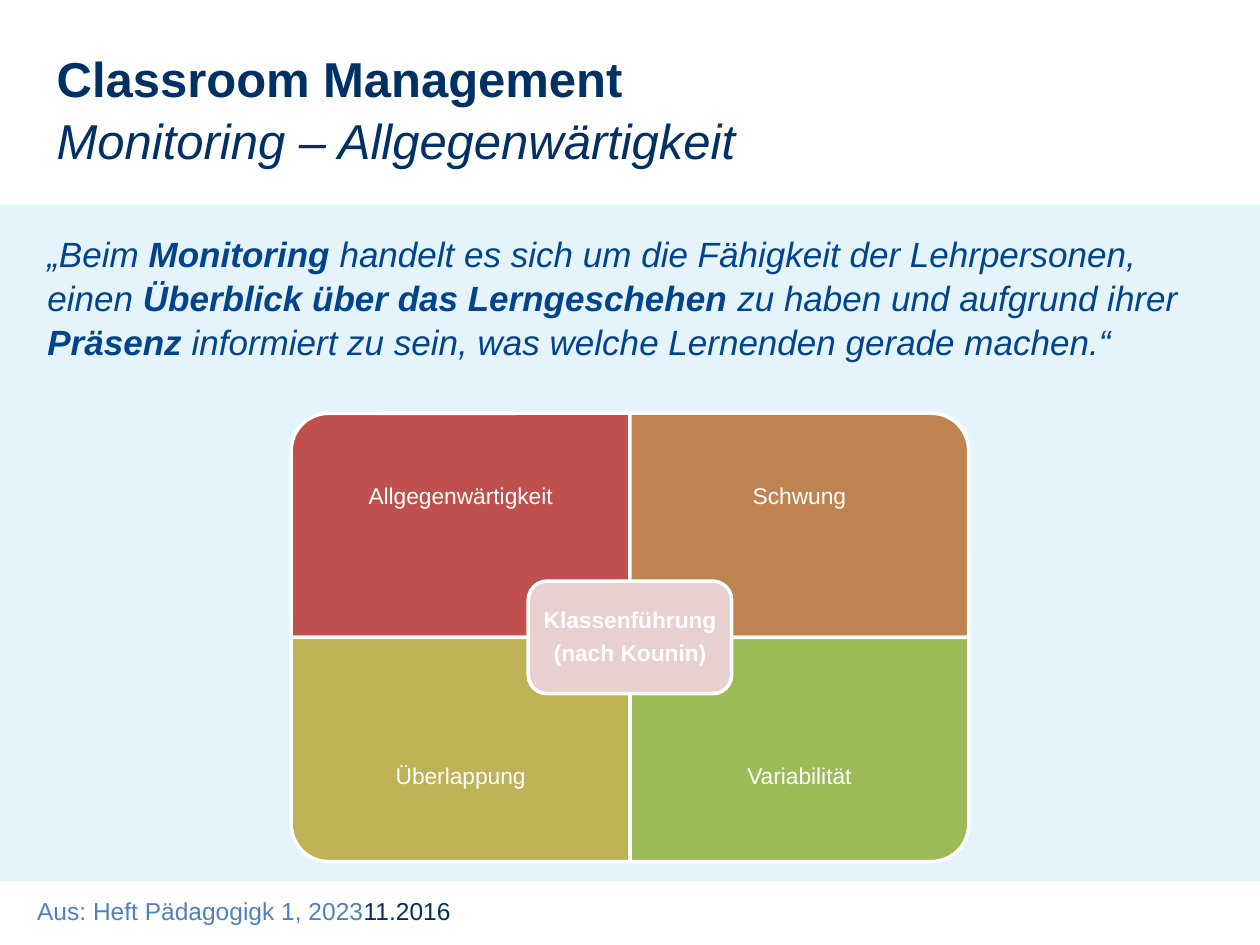
from dataclasses import dataclass

from lxml import etree
from pptx import Presentation
from pptx.dml.color import RGBColor
from pptx.enum.shapes import MSO_SHAPE
from pptx.enum.text import MSO_ANCHOR, MSO_AUTO_SIZE, PP_ALIGN
from pptx.oxml.ns import qn
from pptx.util import Cm, Pt

RECT, ROUND, CORNER = (MSO_SHAPE.RECTANGLE, MSO_SHAPE.ROUNDED_RECTANGLE,
                       MSO_SHAPE.ROUND_1_RECTANGLE)
TOP, MIDDLE = MSO_ANCHOR.TOP, MSO_ANCHOR.MIDDLE
LEFT, CENTER = PP_ALIGN.LEFT, PP_ALIGN.CENTER
NO_FIT = MSO_AUTO_SIZE.NONE

COLORS = {
    "panel": "008CCF", "navy": "003064", "blue": "00448D", "source": "4F81BD",
    "white": "FFFFFF", "red": "C0504D", "brown": "BE8351", "olive": "BDB255",
    "green": "9BBB59", "rose": "E8D0D0",
}

MID_X, MID_Y = 12.7, 12.85
TILE_W, TILE_H = 6.83, 4.52
LABEL_H = TILE_H * 0.75
HUB_W, HUB_H = 4.1, 2.27


@dataclass
class Run:
    text: str
    color: str
    size: float
    bold: bool = False
    italic: bool = False


@dataclass
class Tile:
    label: str
    color: str
    col: int
    row: int
    turn: int


TILES = [
    Tile("Allgegenwärtigkeit", "red", 0, 0, 270),
    Tile("Schwung", "brown", 1, 0, 0),
    Tile("Überlappung", "olive", 0, 1, 180),
    Tile("Variabilität", "green", 1, 1, 90),
]

TITLE = [
    [Run("Classroom Management", "navy", 28, bold=True)],
    [Run("Monitoring – Allgegenwärtigkeit", "navy", 28, italic=True)],
]
QUOTE_PARTS = [
    ("„Beim ", False), ("Monitoring ", True),
    ("handelt es sich um die Fähigkeit der Lehrpersonen, einen ", False),
    ("Überblick über das Lerngeschehen ", True),
    ("zu haben und aufgrund ihrer ", False), ("Präsenz", True),
    (" informiert zu sein, was welche Lernenden gerade machen.“", False),
]
QUOTE = [[Run(text, "blue", 20, bold, True) for text, bold in QUOTE_PARTS]]
FOOTER = [[Run("Aus: Heft Pädagogigk 1, 2023", "source", 14),
           Run("11.2016", "navy", 14)]]
HUB = [[Run(text, "white", 13, bold=True)]
       for text in ("Klassenführung", "(nach Kounin)")]

HEAD_FORM = {"alignment": LEFT, "line_spacing": 1.05,
             "space_before": Pt(0), "space_after": Pt(0)}
LABEL_FORM = {"alignment": CENTER, "line_spacing": 0.9,
              "space_before": Pt(0), "space_after": Pt(4.55)}
FOOT_FORM = {"alignment": LEFT}


def assign(target, values: dict) -> None:
    for name, value in values.items():
        setattr(target, name, value)


def rgb(name: str) -> RGBColor:
    return RGBColor.from_string(COLORS[name])


def place(shape, left: float, top: float, width: float, height: float) -> None:
    assign(shape, {"left": Cm(left), "top": Cm(top),
                   "width": Cm(width), "height": Cm(height)})


def write(shape, lines: list[list[Run]], form: dict, anchor=TOP,
          inset: float | None = None) -> None:
    frame = shape.text_frame
    assign(frame, {"word_wrap": True, "auto_size": NO_FIT,
                   "vertical_anchor": anchor})
    if inset is not None:
        sides = ("left", "top", "right", "bottom")
        assign(frame, {f"margin_{side}": Cm(inset) for side in sides})
    for index, line in enumerate(lines):
        para = frame.add_paragraph() if index else frame.paragraphs[0]
        assign(para, form)
        for item in line:
            run = para.add_run()
            run.text = item.text
            assign(run.font, {"name": "Arial", "size": Pt(item.size),
                              "bold": item.bold, "italic": item.italic})
            run.font.color.rgb = rgb(item.color)


def add_text(slide, box: tuple, lines: list[list[Run]], form: dict,
             anchor=TOP, inset: float | None = None) -> None:
    shape = slide.shapes.add_textbox(*map(Cm, box))
    write(shape, lines, form, anchor, inset)


def add_block(slide, kind, box: tuple, color: str, edge: bool = True):
    shape = slide.shapes.add_shape(kind, *map(Cm, box))
    shape.shadow.inherit = False
    shape.fill.solid()
    shape.fill.fore_color.rgb = rgb(color)
    if edge:
        shape.line.color.rgb = rgb("white")
        shape.line.width = Pt(2)
    else:
        shape.line.fill.background()
    return shape


def add_panel(slide) -> None:
    """Draw the pale band and put it behind the placeholders."""
    panel = add_block(slide, RECT, (0, 4.12, 25.4, 13.64), "panel", False)
    color = panel.fill._xPr.find(f".//{qn('a:srgbClr')}")
    etree.SubElement(color, qn("a:alpha")).set("val", "10000")
    slide.shapes._spTree.insert(2, panel._element)


def add_tile(slide, tile: Tile) -> None:
    """Draw a quarter whose round corner is turned to the outside."""
    left = MID_X + (tile.col - 1) * TILE_W
    top = MID_Y + (tile.row - 1) * TILE_H
    width, height = (TILE_H, TILE_W) if tile.turn % 180 else (TILE_W, TILE_H)
    box = (left + (TILE_W - width) / 2, top + (TILE_H - height) / 2,
           width, height)
    add_block(slide, CORNER, box, tile.color).rotation = tile.turn
    label_top = top + tile.row * (TILE_H - LABEL_H)
    add_text(slide, (left, label_top, TILE_W, LABEL_H),
             [[Run(tile.label, "white", 13)]], LABEL_FORM, MIDDLE, 0.25)


def main() -> None:
    deck = Presentation()
    assign(deck, {"slide_width": Cm(25.4), "slide_height": Cm(19.05)})
    slide = deck.slides.add_slide(deck.slide_layouts[1])
    add_panel(slide)

    title, body = slide.placeholders
    place(title, 0.89, 0.79, 15.8, 2.64)
    write(title, TITLE, HEAD_FORM)
    place(body, 0.7, 4.52, 24, 3.68)
    props = body.text_frame.paragraphs[0]._p.get_or_add_pPr()
    props.set("marL", "0")
    props.set("indent", "0")
    etree.SubElement(props, qn("a:buNone"))
    write(body, QUOTE, HEAD_FORM)

    add_text(slide, (0.5, 17.93, 21.8, 1.1), FOOTER, FOOT_FORM)
    for tile in TILES:
        add_tile(slide, tile)
    hub = (MID_X - HUB_W / 2, MID_Y - HUB_H / 2, HUB_W, HUB_H)
    add_block(slide, ROUND, hub, "rose")
    add_text(slide, hub, HUB, LABEL_FORM, MIDDLE, 0.23)
    deck.save("out.pptx")


if __name__ == "__main__":
    main()
